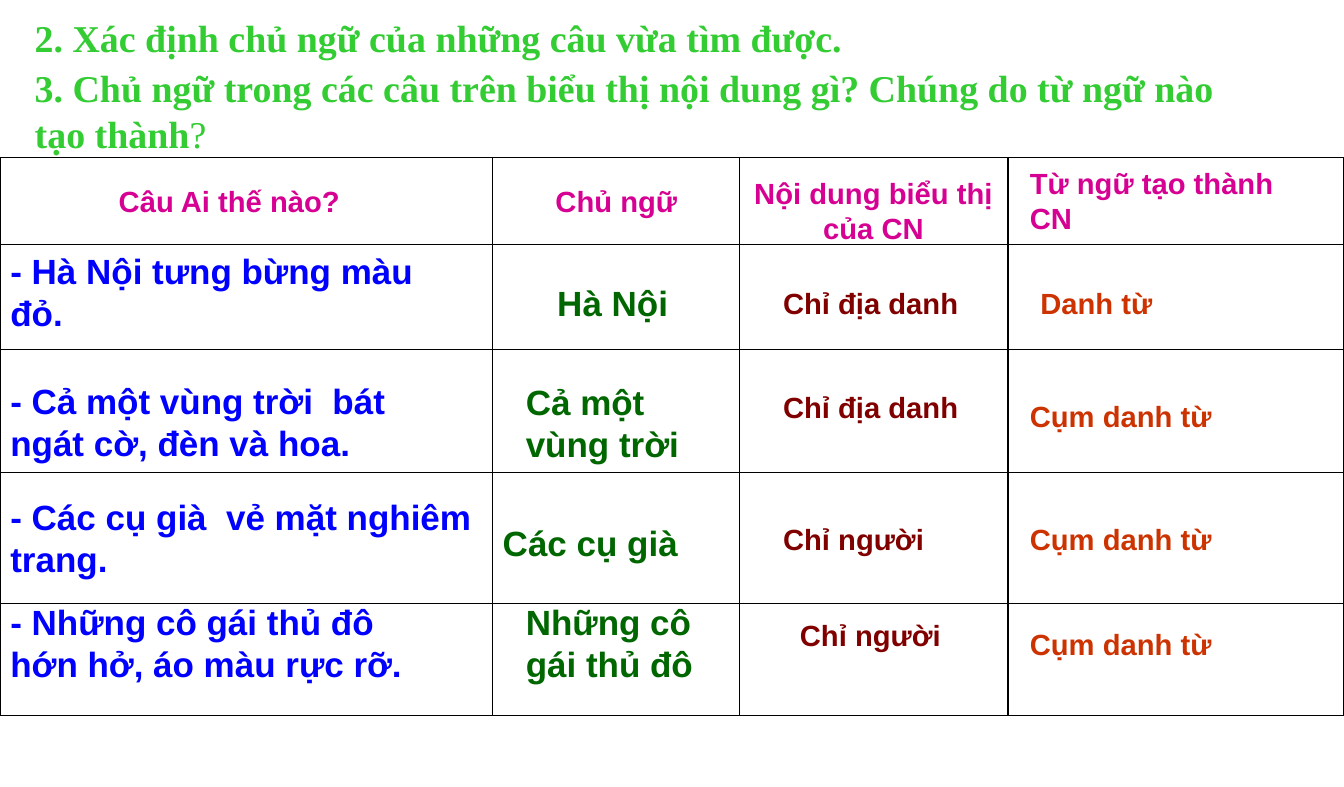
import itertools

import pptx
import pptx.dml.color
import pptx.enum.text
import pptx.oxml
import pptx.oxml.ns
import pptx.util

Inches = pptx.util.Inches
RGB = pptx.dml.color.RGBColor
LEFT = pptx.enum.text.PP_ALIGN.LEFT
CENTER = pptx.enum.text.PP_ALIGN.CENTER

GREEN = RGB(0x33, 0xCC, 0x33)
MAGENTA = RGB(0xD6, 0x00, 0x93)
BLUE = RGB(0x00, 0x00, 0xFF)
DARK_GREEN = RGB(0x00, 0x66, 0x00)
MAROON = RGB(0x80, 0x00, 0x00)
ORANGE = RGB(0xCC, 0x33, 0x00)
BLACK = RGB(0x00, 0x00, 0x00)

# Slide size in whole units of 1/576 inch
SLIDE_WIDTH = pptx.util.Emu(11704638)
SLIDE_HEIGHT = pptx.util.Emu(6858000)
COLUMNS = [4.69, 2.35, 2.56, 3.2]
ROWS = [0.83, 1, 1.17, 1.25, 1.07]
TABLE_TOP = 1.5
COLUMN_LEFTS = list(itertools.accumulate(COLUMNS, initial=0))
ROW_TOPS = list(itertools.accumulate(ROWS, initial=TABLE_TOP))

QUESTION = dict(name="Times New Roman", size=pptx.util.Pt(26), bold=True)
HEADING = dict(name="Arial", size=pptx.util.Pt(20), bold=True)
SENTENCE = dict(name="Arial", size=pptx.util.Pt(24), bold=True)

# Each entry: text, offset right and down from its cell's corner, width, lines, alignment
HEADINGS = [
    ("Câu Ai thế nào?", 0, 0.2, 4.37, 1, CENTER),
    ("Chủ ngữ", 0.22, 0.2, 1.92, 1, CENTER),
    ("Nội dung biểu thị của CN", 0, 0.12, 2.56, 2, CENTER),
    ("Từ ngữ tạo thành CN", 0.11, 0.03, 2.99, 2, LEFT),
]
ANSWERS = [
    (SENTENCE, BLUE, [
        ("- Hà Nội tưng bừng màu đỏ.", 0, 0, 4.59, 2, LEFT),
        ("- Cả một vùng trời  bát ngát cờ, đèn và hoa.", 0, 0.24, 4.37, 2, LEFT),
        ("- Các cụ già  vẻ mặt nghiêm trang.", 0, 0.17, 4.69, 2, LEFT),
        ("- Những cô gái thủ đô  hớn hở, áo màu rực rỡ.", 0, -0.08, 4.37, 2, LEFT),
    ]),
    (SENTENCE, DARK_GREEN, [
        ("Hà Nội", 0.13, 0.3, 2.03, 1, CENTER),
        ("Cả một vùng trời", 0.22, 0.25, 2.03, 2, LEFT),
        ("Các cụ già", 0, 0.42, 2.13, 1, LEFT),
        ("Những cô gái thủ đô", 0.22, -0.08, 2.03, 2, LEFT),
    ]),
    (HEADING, MAROON, [
        ("Chỉ địa danh", 0.32, 0.34, 2.24, 1, LEFT),
        ("Chỉ địa danh", 0.32, 0.33, 2.24, 1, LEFT),
        ("Chỉ người", 0.32, 0.42, 2.09, 1, LEFT),
        ("Chỉ người", 0.48, 0.08, 2.09, 1, LEFT),
    ]),
    (HEADING, ORANGE, [
        ("Danh từ", 0.21, 0.34, 2.99, 1, LEFT),
        ("Cụm danh từ", 0.11, 0.42, 3.09, 1, LEFT),
        ("Cụm danh từ", 0.11, 0.42, 3.09, 1, LEFT),
        ("Cụm danh từ", 0.11, 0.17, 3.09, 1, LEFT),
    ]),
]


def set_attributes(target, values):
    for key, value in values.items():
        setattr(target, key, value)


def format_run(run, font, color):
    set_attributes(run.font, font)
    run.font.color.rgb = color


def format_frame(frame):
    set_attributes(frame, dict(
        word_wrap=True,
        auto_size=pptx.enum.text.MSO_AUTO_SIZE.SHAPE_TO_FIT_TEXT,
        vertical_anchor=pptx.enum.text.MSO_ANCHOR.TOP,
    ))


def fill_question(placeholder, box, parts):
    """Write a question as (text, bold) parts in a placeholder without a bullet."""
    for key, value in zip(("left", "top", "width", "height"), box):
        setattr(placeholder, key, Inches(value))
    format_frame(placeholder.text_frame)
    paragraph = placeholder.text_frame.paragraphs[0]
    properties = paragraph._p.get_or_add_pPr()
    properties.set("marL", "0")
    properties.set("indent", "0")
    properties.append(pptx.oxml.parse_xml(
        f'<a:buNone {pptx.oxml.ns.nsdecls("a")}/>'))
    set_attributes(paragraph, dict(alignment=LEFT, space_before=pptx.util.Pt(0)))
    for text, bold in parts:
        run = paragraph.add_run()
        run.text = text
        format_run(run, QUESTION | dict(bold=bold), GREEN)


def add_borders(cell):
    properties = cell._tc.get_or_add_tcPr()
    for position, side in enumerate(("lnL", "lnR", "lnT", "lnB")):
        properties.insert(position, pptx.oxml.parse_xml(
            f'<a:{side} {pptx.oxml.ns.nsdecls("a")} w="12700"><a:solidFill>'
            f'<a:srgbClr val="{BLACK}"/></a:solidFill></a:{side}>'))


def add_grid(slide):
    table = slide.shapes.add_table(
        len(ROWS), len(COLUMNS), 0, Inches(TABLE_TOP),
        Inches(sum(COLUMNS)), Inches(sum(ROWS))).table
    set_attributes(table, dict(first_row=False, horz_banding=False))
    for column, width in zip(table.columns, COLUMNS):
        column.width = Inches(width)
    for row, height in zip(table.rows, ROWS):
        row.height = Inches(height)
    for cell in table.iter_cells():
        cell.fill.background()
        add_borders(cell)


def add_entry(slide, row, column, entry, font, color):
    """Place a text over the given cell of the grid."""
    text, right, down, width, lines, alignment = entry
    height = 0.1 + lines * font["size"].inches * 1.2
    frame = slide.shapes.add_textbox(
        Inches(COLUMN_LEFTS[column] + right), Inches(ROW_TOPS[row] + down),
        Inches(width), Inches(height)).text_frame
    format_frame(frame)
    paragraph = frame.paragraphs[0]
    paragraph.alignment = alignment
    run = paragraph.add_run()
    run.text = text
    format_run(run, font, color)


def main():
    presentation = pptx.Presentation()
    presentation.slide_width = SLIDE_WIDTH
    presentation.slide_height = SLIDE_HEIGHT
    slide = presentation.slides.add_slide(presentation.slide_layouts[1])

    fill_question(slide.shapes.title, (0.23, 0.09, 12.33, 0.54), [
        ("2. Xác định chủ ngữ của những câu vừa tìm được.", True)])
    fill_question(slide.placeholders[1], (0.23, 0.57, 11.98, 0.98), [
        ("3. Chủ ngữ trong các câu trên biểu thị nội dung gì? "
         "Chúng do từ ngữ nào tạo thành", True),
        ("?", False)])

    add_grid(slide)
    for column, heading in enumerate(HEADINGS):
        add_entry(slide, 0, column, heading, HEADING, MAGENTA)
    for column, (font, color, entries) in enumerate(ANSWERS):
        for row, entry in enumerate(entries, start=1):
            add_entry(slide, row, column, entry, font, color)

    presentation.save("out.pptx")


if __name__ == "__main__":
    main()
